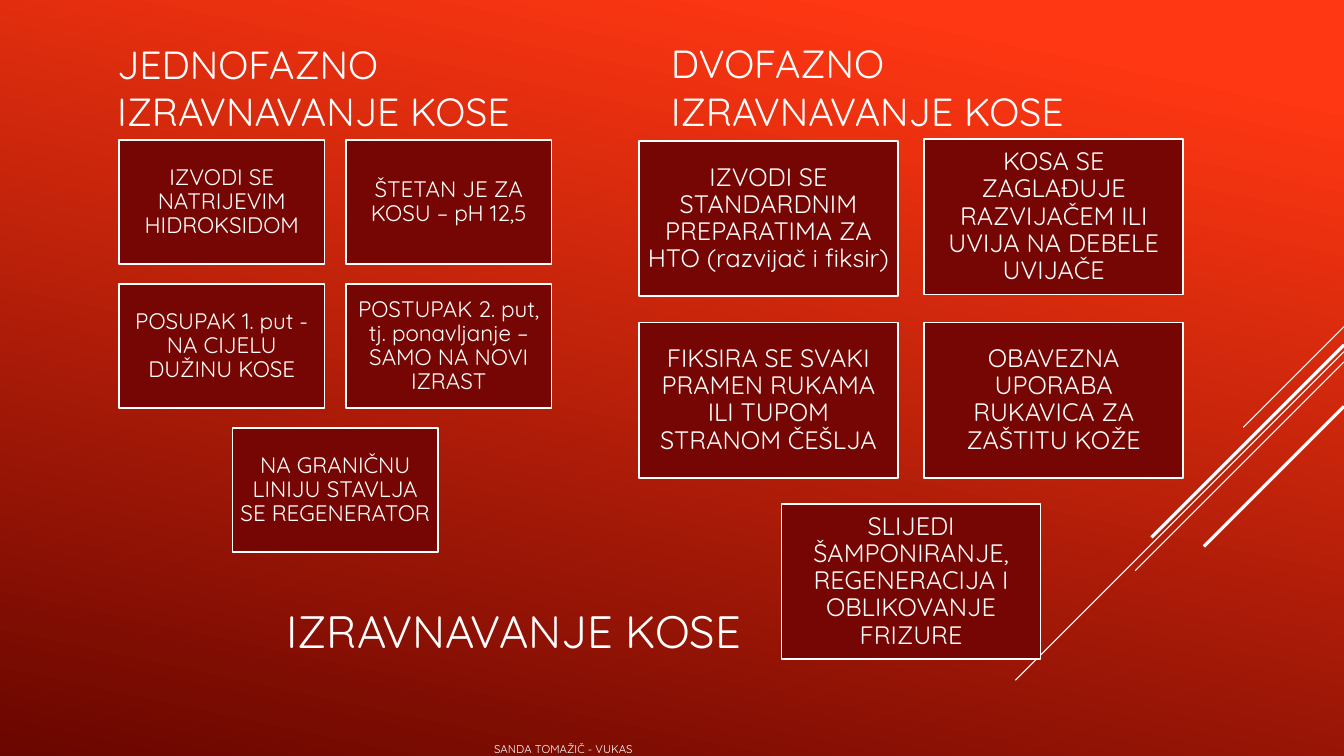
from dataclasses import dataclass

import pptx
import pptx.dml.color
import pptx.enum.shapes
import pptx.enum.text
import pptx.oxml.ns
import pptx.slide
import pptx.util
from lxml import etree
from pptx.util import Cm

FONT = "Quicksand"
COLOURS = {"bright": "FF3712", "dark": "6A0600", "card": "760603", "white": "FFFFFF"}
PAGE_WIDTH, PAGE_HEIGHT = 33.87, 19.05
ALIGN = pptx.enum.text.PP_ALIGN
ANCHOR = pptx.enum.text.MSO_ANCHOR


@dataclass
class Ray:
    """A 45 degree line falling leftwards from the right edge of the page."""
    top: float
    reach: float
    weight: float


@dataclass
class Label:
    text: str
    left: float
    top: float
    width: float
    height: float
    size: float
    align: ALIGN = ALIGN.LEFT
    anchor: ANCHOR = ANCHOR.BOTTOM
    inset: float = 0.25


@dataclass
class CardGroup:
    """Two columns of cards, with an odd last card centred below them."""
    left: float
    top: float
    width: float
    height: float
    column_step: float
    row_step: float
    size: float
    texts: list[str]
    second_rise: float = 0  # the second card sits this much higher


RAYS = [
    Ray(8.23, 2.54, 0.75),
    Ray(8.86, 8.28, 0.75),
    Ray(9.12, 5.26, 0.75),
    Ray(8.69, 4.85, 2.25),
    Ray(10.24, 3.53, 2.25),
]
LABELS = [
    Label("IZRAVNAVANJE KOSE", 0.3, 15, 25.3, 1.75, 32.4, ALIGN.CENTER, ANCHOR.MIDDLE),
    Label("SANDA TOMAŽIČ - VUKAS", 10.2, 18.7, 8, 0.35, 8.1, ALIGN.CENTER, ANCHOR.MIDDLE, 0),
    Label("JEDNOFAZNO IZRAVNAVANJE KOSE", 2.7, 0.84, 12.93, 2.67, 28),
    Label("DVOFAZNO IZRAVNAVANJE KOSE", 16.66, 1.09, 13.16, 2.41, 28),
]
CARD_GROUPS = [
    CardGroup(3, 3.53, 5.18, 3.12, 5.72, 3.63, 16, [
        "IZVODI SE NATRIJEVIM HIDROKSIDOM",
        "ŠTETAN JE ZA KOSU – pH 12,5",
        "POSUPAK 1. put - NA CIJELU DUŽINU KOSE",
        "POSTUPAK 2. put, tj. ponavljanje – SAMO NA NOVI IZRAST",
        "NA GRANIČNU LINIJU STAVLJA SE REGENERATOR",
    ]),
    CardGroup(16.1, 3.56, 6.53, 3.91, 7.19, 4.57, 18, [
        "IZVODI SE STANDARDNIM PREPARATIMA ZA HTO (razvijač i fiksir)",
        "KOSA SE ZAGLAĐUJE RAZVIJAČEM ILI UVIJA NA DEBELE UVIJAČE",
        "FIKSIRA SE SVAKI PRAMEN RUKAMA ILI TUPOM STRANOM ČEŠLJA",
        "OBAVEZNA UPORABA RUKAVICA ZA ZAŠTITU KOŽE",
        "SLIJEDI ŠAMPONIRANJE, REGENERACIJA I OBLIKOVANJE FRIZURE",
    ], second_rise=0.05),
]


def colour(name: str) -> pptx.dml.color.RGBColor:
    return pptx.dml.color.RGBColor.from_string(COLOURS[name])


def paint_background(page: pptx.slide.Slide) -> None:
    fill = page.background.fill
    fill.gradient()
    fill.gradient_angle = 258
    for stop, position, name in zip(fill.gradient_stops, (0.1, 1), ("bright", "dark")):
        stop.position = position
        stop.color.rgb = colour(name)


def write_text(shape, text: str, size: float, align: ALIGN, anchor: ANCHOR,
               inset_x: float, inset_y: float, spacing: float = 1) -> None:
    frame = shape.text_frame
    frame.word_wrap = True
    frame.vertical_anchor = anchor
    frame.margin_left = frame.margin_right = Cm(inset_x)
    frame.margin_top = frame.margin_bottom = Cm(inset_y)
    para = frame.paragraphs[0]
    para.text = text
    para.alignment = align
    para.line_spacing = spacing
    para.font.name = FONT
    para.font.size = pptx.util.Pt(size)
    para.font.color.rgb = colour("white")


def draw_ray(page: pptx.slide.Slide, ray: Ray) -> None:
    line = page.shapes.add_connector(
        pptx.enum.shapes.MSO_CONNECTOR.STRAIGHT,
        Cm(PAGE_WIDTH), Cm(ray.top), Cm(PAGE_WIDTH - ray.reach), Cm(ray.top + ray.reach))
    line.line.color.rgb = colour("white")
    line.line.width = pptx.util.Pt(ray.weight)
    etree.SubElement(line.element.spPr, pptx.oxml.ns.qn("a:effectLst"))


def draw_label(page: pptx.slide.Slide, label: Label) -> None:
    box = page.shapes.add_textbox(
        Cm(label.left), Cm(label.top), Cm(label.width), Cm(label.height))
    write_text(box, label.text, label.size, label.align, label.anchor,
               label.inset, label.inset / 2)


def draw_cards(page: pptx.slide.Slide, group: CardGroup) -> None:
    for index, text in enumerate(group.texts):
        row, column = divmod(index, 2)
        alone = column == 0 and index == len(group.texts) - 1
        left = group.left + group.column_step * (0.5 if alone else column)
        top = group.top + group.row_step * row - (group.second_rise if index == 1 else 0)
        card = page.shapes.add_shape(
            pptx.enum.shapes.MSO_SHAPE.RECTANGLE,
            Cm(left), Cm(top), Cm(group.width), Cm(group.height))
        card.shadow.inherit = False
        card.fill.solid()
        card.fill.fore_color.rgb = colour("card")
        card.line.color.rgb = colour("white")
        card.line.width = pptx.util.Pt(1.25)
        write_text(card, text, group.size, ALIGN.CENTER, ANCHOR.MIDDLE, 0.18, 0.18, 0.9)


def main() -> None:
    deck = pptx.Presentation()
    deck.slide_width, deck.slide_height = Cm(PAGE_WIDTH), Cm(PAGE_HEIGHT)
    page = deck.slides.add_slide(deck.slide_layouts[6])

    # Backdrop
    paint_background(page)
    for ray in RAYS:
        draw_ray(page, ray)

    # Title, author and column headings
    for label in LABELS:
        draw_label(page, label)

    # Cards of both procedures
    for group in CARD_GROUPS:
        draw_cards(page, group)

    deck.save("out.pptx")


if __name__ == "__main__":
    main()
